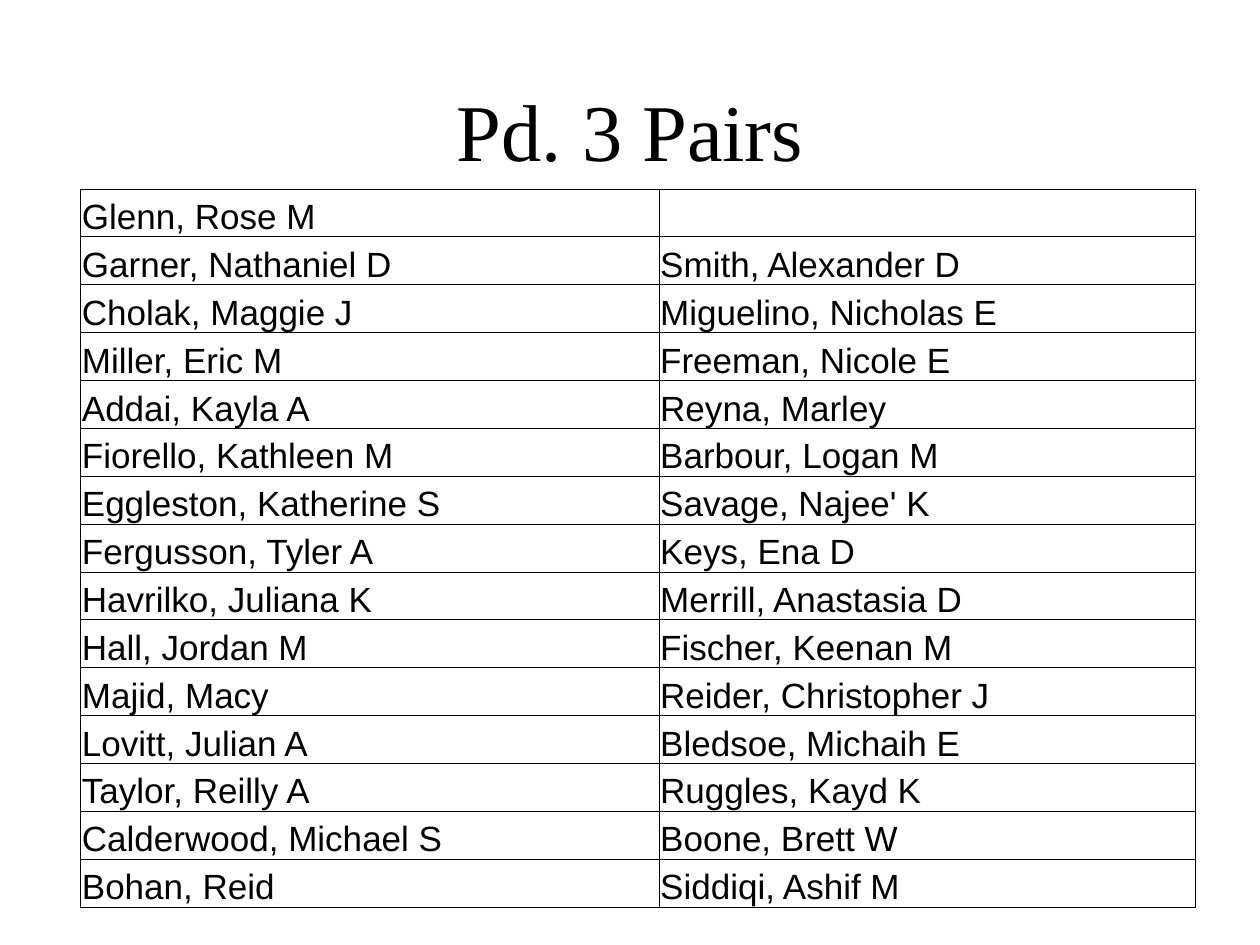
import dataclasses

import lxml.etree
import pptx
import pptx.dml.color
import pptx.enum.text
import pptx.oxml.ns
import pptx.util

Inches = pptx.util.Inches
Pt = pptx.util.Pt

COLORS = {"ink": "000000", "paper": "FFFFFF"}
COLUMN_WIDTHS = (4.59, 4.26)
ROW_HEIGHT = 0.38
BORDER_POINTS = 0.5


@dataclasses.dataclass(frozen=True)
class Pair:
    first: str
    second: str


PAIRS = [
    Pair("Glenn, Rose M", ""),
    Pair("Garner, Nathaniel D", "Smith, Alexander D"),
    Pair("Cholak, Maggie J", "Miguelino, Nicholas E"),
    Pair("Miller, Eric M", "Freeman, Nicole E"),
    Pair("Addai, Kayla A", "Reyna, Marley"),
    Pair("Fiorello, Kathleen M", "Barbour, Logan M"),
    Pair("Eggleston, Katherine S", "Savage, Najee' K"),
    Pair("Fergusson, Tyler A", "Keys, Ena D"),
    Pair("Havrilko, Juliana K", "Merrill, Anastasia D"),
    Pair("Hall, Jordan M", "Fischer, Keenan M"),
    Pair("Majid, Macy", "Reider, Christopher J"),
    Pair("Lovitt, Julian A", "Bledsoe, Michaih E"),
    Pair("Taylor, Reilly A", "Ruggles, Kayd K"),
    Pair("Calderwood, Michael S", "Boone, Brett W"),
    Pair("Bohan, Reid", "Siddiqi, Ashif M"),
]


def color(name: str) -> pptx.dml.color.RGBColor:
    return pptx.dml.color.RGBColor.from_string(COLORS[name])


def add_text(para, text: str, font_name: str, size: float) -> None:
    span = para.add_run()
    span.text = text
    span.font.name = font_name
    span.font.size = Pt(size)
    span.font.color.rgb = color("ink")


def add_borders(cell) -> None:
    qn = pptx.oxml.ns.qn
    properties = cell._tc.get_or_add_tcPr()
    for side in ("lnL", "lnR", "lnT", "lnB"):
        line = lxml.etree.SubElement(
            properties, qn(f"a:{side}"), w=str(Pt(BORDER_POINTS))
        )
        fill = lxml.etree.SubElement(line, qn("a:solidFill"))
        lxml.etree.SubElement(fill, qn("a:srgbClr"), val=COLORS["ink"])


def format_cell(cell, text: str) -> None:
    cell.margin_left = cell.margin_right = cell.margin_top = Inches(0.01)
    cell.margin_bottom = Inches(0)
    cell.vertical_anchor = pptx.enum.text.MSO_ANCHOR.BOTTOM
    add_borders(cell)
    cell.fill.solid()
    cell.fill.fore_color.rgb = color("paper")
    if text:
        add_text(cell.text_frame.paragraphs[0], text, "Arial", 20)


def add_title(page, text: str) -> None:
    box = page.shapes.title
    box.left, box.top = Inches(1), Inches(0.55)
    box.width, box.height = Inches(8), Inches(0.95)
    box.text_frame.vertical_anchor = pptx.enum.text.MSO_ANCHOR.MIDDLE
    para = box.text_frame.paragraphs[0]
    para.alignment = pptx.enum.text.PP_ALIGN.CENTER
    add_text(para, text, "Times New Roman", 46)


def add_pairs_table(page, pairs: list[Pair]) -> None:
    table = page.shapes.add_table(
        len(pairs), len(COLUMN_WIDTHS), Inches(0.64), Inches(1.5),
        Inches(sum(COLUMN_WIDTHS)), Inches(ROW_HEIGHT * len(pairs)),
    ).table
    table.first_row = False
    table.horz_banding = False
    for column, width in zip(table.columns, COLUMN_WIDTHS):
        column.width = Inches(width)
    for row, pair in zip(table.rows, pairs):
        row.height = Inches(ROW_HEIGHT)
        for cell, name in zip(row.cells, dataclasses.astuple(pair)):
            format_cell(cell, name)


def main() -> None:
    deck = pptx.Presentation()
    deck.slide_width, deck.slide_height = Inches(10), Inches(7.5)
    page = deck.slides.add_slide(deck.slide_layouts.get_by_name("Title Only"))
    page.background.fill.solid()
    page.background.fill.fore_color.rgb = color("paper")
    add_title(page, "Pd. 3 Pairs")
    add_pairs_table(page, PAIRS)
    deck.save("out.pptx")


if __name__ == "__main__":
    main()
